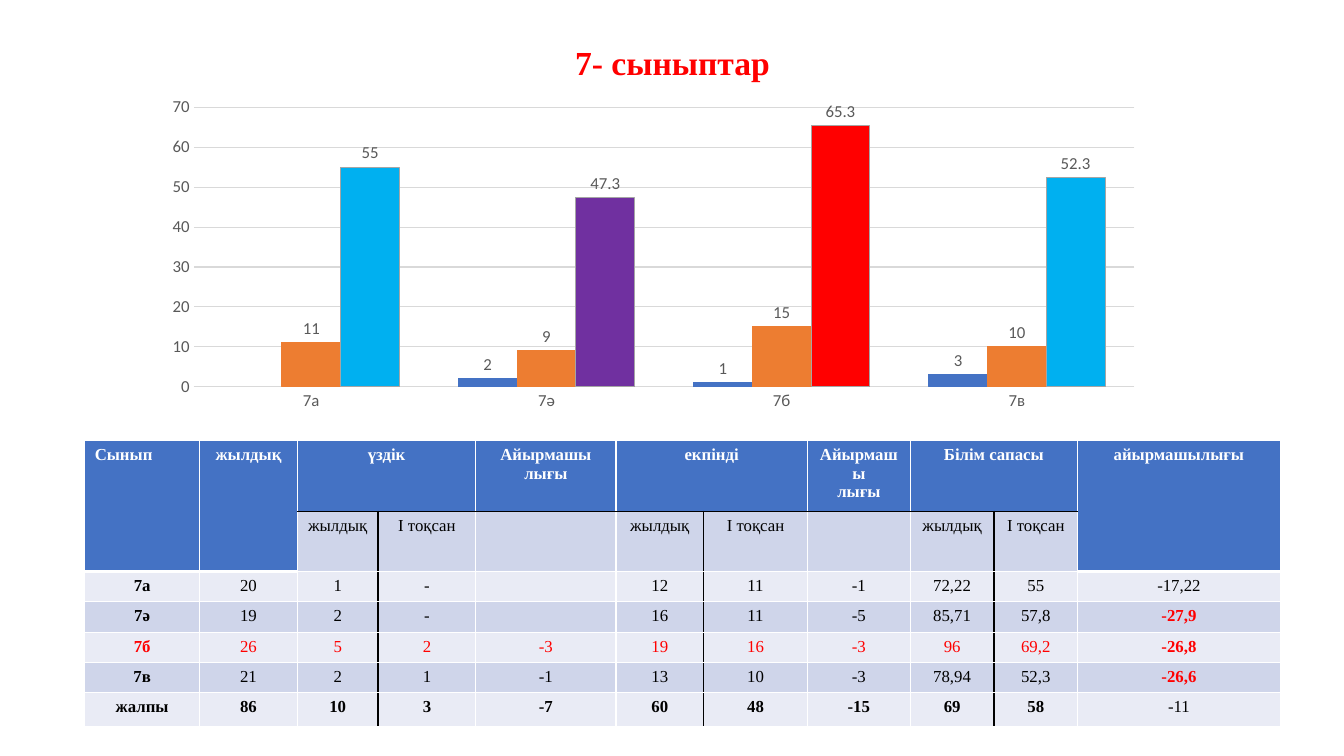
from dataclasses import dataclass

from lxml import etree
from pptx import Presentation
from pptx import util as u
from pptx.chart import data as chart_data
from pptx.dml import color
from pptx.enum import chart as chart_enum
from pptx.enum import text
from pptx.oxml import ns

SERIF, SANS = "Times New Roman", "Calibri"
WHITE, BLACK, RED, BLUE = "FFFFFF", "000000", "FF0000", "4472C4"
GREY, PALE_GREY = "595959", "D9D9D9"
BAND_DARK, BAND_LIGHT = "CFD5EA", "E9EBF5"


@dataclass(frozen=True)
class BarSeries:
    name: str
    values: tuple[float | None, ...]
    fill: str
    line: str
    point_fills: tuple[str, ...] = ()


@dataclass(frozen=True)
class CellStyle:
    fill: str
    color: str
    bold: bool


CLASSES = ("7а", "7ә", "7б", "7в")
SERIES = (
    BarSeries("Series 1", (None, 2, 1, 3), BLUE, BLUE),
    BarSeries("Series 2", (11, 9, 15, 10), "ED7D31", "ED7D31"),
    BarSeries("Series 3", (55, 47.3, 65.3, 52.3), "00B0F0", "A5A5A5",
              ("00B0F0", "7030A0", RED, "00B0F0")),
)

COLUMN_WIDTHS = (1.14, 0.97, 0.8, 0.97, 1.39, 0.87, 1.03, 1.02, 0.83, 0.83, 2.01)
ROW_HEIGHTS = (0.65, 0.6, 0.28, 0.28, 0.28, 0.28, 0.34)
SPLIT_COLUMNS = (2, 5, 8)
TALL_COLUMNS = (0, 1, 10)
ROWS = (
    ("Сынып", "жылдық", "үздік", "", "Айырмашы\nлығы", "екпінді", "",
     "Айырмашы\nлығы", "Білім сапасы", "", "айырмашылығы"),
    ("", "", "жылдық", "І тоқсан", "", "жылдық", "І тоқсан", "", "жылдық", "І тоқсан", ""),
    ("7а", "20", "1", "-", "", "12", "11", "-1", "72,22", "55", "-17,22"),
    ("7ә", "19", "2", "-", "", "16", "11", "-5", "85,71", "57,8", "-27,9"),
    ("7б", "26", "5", "2", "-3", "19", "16", "-3", "96", "69,2", "-26,8"),
    ("7в", "21", "2", "1", "-1", "13", "10", "-3", "78,94", "52,3", "-26,6"),
    ("жалпы", "86", "10", "3", "-7", "60", "48", "-15", "69", "58", "-11"),
)
BEST_ROW, TOTAL_ROW, LAST_COLUMN = 4, 6, 10


def rgb(value: str) -> color.RGBColor:
    return color.RGBColor.from_string(value)


def style_font(font, name: str, size: float, tint: str, bold: bool = False) -> None:
    font.name = name
    font.size = u.Pt(size)
    font.bold = bold
    font.color.rgb = rgb(tint)


def style_line(line, tint: str) -> None:
    line.color.rgb = rgb(tint)
    line.width = u.Pt(0.75)


def paint_bar(bar_format, fill: str, line: str) -> None:
    bar_format.fill.solid()
    bar_format.fill.fore_color.rgb = rgb(fill)
    style_line(bar_format.line, line)


def add_title(page) -> None:
    box = page.shapes.add_textbox(u.Inches(0.92), u.Inches(0.4), u.Inches(11.5), u.Inches(0.48))
    box.text_frame.word_wrap = True
    box.text_frame.vertical_anchor = text.MSO_ANCHOR.MIDDLE
    para = box.text_frame.paragraphs[0]
    para.alignment = text.PP_ALIGN.CENTER
    para.line_spacing = 0.9
    span = para.add_run()
    span.text = "7- сыныптар"
    style_font(span.font, SERIF, 24, RED, True)


def place_plot(chart, left: float, top: float, width: float, height: float) -> None:
    area = chart.plots[0]._element.getparent()
    for old in area.findall(ns.qn("c:layout")):
        area.remove(old)
    layout = etree.Element(ns.qn("c:layout"))
    manual = etree.SubElement(layout, ns.qn("c:manualLayout"))
    settings = (("layoutTarget", "inner"), ("xMode", "edge"), ("yMode", "edge"),
                ("x", left), ("y", top), ("w", width), ("h", height))
    for tag, value in settings:
        etree.SubElement(manual, ns.qn(f"c:{tag}")).set("val", str(value))
    area.insert(0, layout)


def add_class_chart(page) -> None:
    figures = chart_data.CategoryChartData()
    figures.categories = CLASSES
    for item in SERIES:
        figures.add_series(item.name, item.values)
    chart = page.shapes.add_chart(
        chart_enum.XL_CHART_TYPE.COLUMN_CLUSTERED, u.Inches(1.01), u.Inches(0.64),
        u.Inches(10.85), u.Inches(3.5), figures).chart
    chart.has_title = False
    chart.has_legend = False
    style_font(chart.font, SANS, 10, BLACK)
    place_plot(chart, 0.084, 0.121, 0.86, 0.793)

    plot = chart.plots[0]
    plot.gap_width = 100
    plot.overlap = 0
    plot.vary_by_categories = False
    for series, item in zip(plot.series, SERIES):
        series.invert_if_negative = False
        paint_bar(series.format, item.fill, item.line)
        for index, fill in enumerate(item.point_fills):
            paint_bar(series.points[index].format, fill, item.line)
        labels = series.data_labels
        labels.show_value = True
        labels.position = chart_enum.XL_LABEL_POSITION.OUTSIDE_END
        style_font(labels.font, SANS, 12, GREY)

    for axis in (chart.category_axis, chart.value_axis):
        axis.major_tick_mark = chart_enum.XL_TICK_MARK.NONE
        axis.minor_tick_mark = chart_enum.XL_TICK_MARK.NONE
        style_font(axis.tick_labels.font, SANS, 12, GREY)
    style_line(chart.category_axis.format.line, PALE_GREY)
    scale = chart.value_axis
    scale.minimum_scale, scale.maximum_scale, scale.major_unit = 0, 70, 10
    scale.format.line.fill.background()
    style_line(scale.major_gridlines.format.line, PALE_GREY)


def style_for(row: int, column: int) -> CellStyle:
    if row == 0 or (row == 1 and column in TALL_COLUMNS):
        return CellStyle(BLUE, WHITE, True)
    flagged = column == LAST_COLUMN and 3 <= row <= 5
    total = row == TOTAL_ROW and column != LAST_COLUMN
    return CellStyle(BAND_DARK if row % 2 else BAND_LIGHT,
                     RED if flagged or row == BEST_ROW else BLACK,
                     flagged or total or (column == 0 and row > 1))


def side_edge(row: int, boundary: int) -> tuple[str, float]:
    return (BLACK if row > 0 and boundary - 1 in SPLIT_COLUMNS else WHITE), 1


def level_edge(boundary: int, column: int) -> tuple[str, float]:
    tall = column in TALL_COLUMNS
    if boundary == 2 and tall:
        return WHITE, 3
    return (BLACK if boundary == 1 and not tall else WHITE), 1


def set_borders(cell, row: int, column: int) -> None:
    edges = {"lnL": side_edge(row, column), "lnR": side_edge(row, column + 1),
             "lnT": level_edge(row, column), "lnB": level_edge(row + 1, column)}
    properties = cell._tc.get_or_add_tcPr()
    for tag, (tint, width) in edges.items():
        line = etree.SubElement(properties, ns.qn(f"a:{tag}"), w=str(u.Pt(width)))
        fill = etree.SubElement(line, ns.qn("a:solidFill"))
        etree.SubElement(fill, ns.qn("a:srgbClr"), val=tint)


def fill_cell(cell, row: int, column: int) -> None:
    style = style_for(row, column)
    set_borders(cell, row, column)
    cell.fill.solid()
    cell.fill.fore_color.rgb = rgb(style.fill)
    frame = cell.text_frame
    for index, words in enumerate(ROWS[row][column].split("\n")):
        para = frame.add_paragraph() if index else frame.paragraphs[0]
        para.alignment = text.PP_ALIGN.LEFT if row == column == 0 else text.PP_ALIGN.CENTER
        if words:
            span = para.add_run()
            span.text = words
            style_font(span.font, SERIF, 12, style.color, style.bold)
        else:
            etree.SubElement(para._p, ns.qn("a:endParaRPr"), sz="1200")


def add_results_table(page) -> None:
    table = page.shapes.add_table(
        len(ROWS), len(COLUMN_WIDTHS), u.Inches(0.84), u.Inches(4.37),
        u.Inches(sum(COLUMN_WIDTHS)), u.Inches(sum(ROW_HEIGHTS))).table
    table.first_row = table.horz_banding = False
    for column, width in zip(table.columns, COLUMN_WIDTHS):
        column.width = u.Inches(width)
    for row, height in zip(table.rows, ROW_HEIGHTS):
        row.height = u.Inches(height)
    for row in range(len(ROWS)):
        for column in range(len(COLUMN_WIDTHS)):
            fill_cell(table.cell(row, column), row, column)
    for column in SPLIT_COLUMNS:
        table.cell(0, column).merge(table.cell(0, column + 1))
    for column in TALL_COLUMNS:
        table.cell(0, column).merge(table.cell(1, column))


def main() -> None:
    deck = Presentation()
    deck.slide_width, deck.slide_height = u.Inches(13.33), u.Inches(7.5)
    page = deck.slides.add_slide(deck.slide_layouts[6])
    add_title(page)
    add_class_chart(page)
    add_results_table(page)
    deck.save("out.pptx")


if __name__ == "__main__":
    main()
